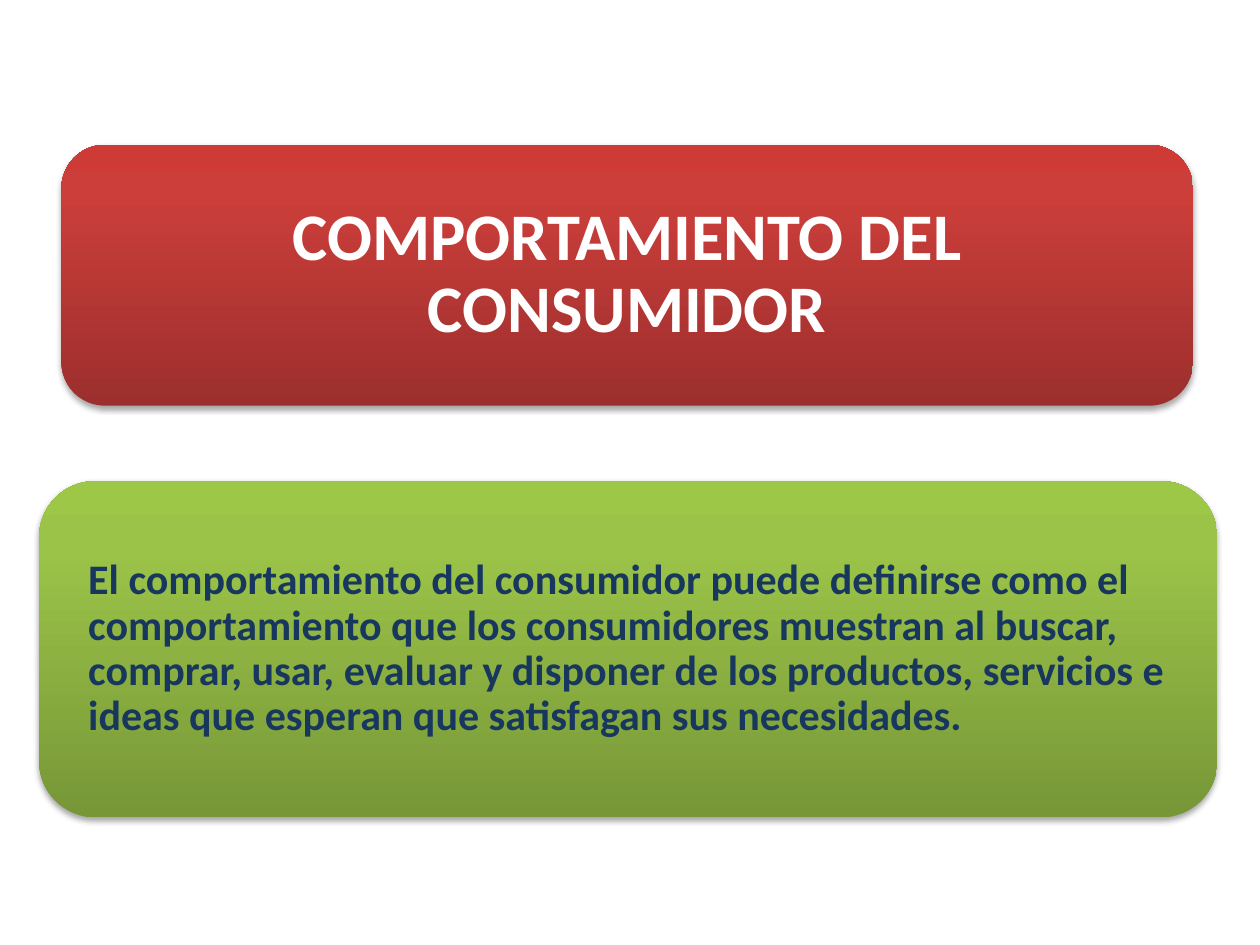
from dataclasses import dataclass

import pptx
import pptx.dml.color
import pptx.enum.shapes
import pptx.enum.text
import pptx.oxml
import pptx.oxml.ns
import pptx.slide
import pptx.util
from lxml import etree

Cm = pptx.util.Cm
RGBColor = pptx.dml.color.RGBColor
Align = pptx.enum.text.PP_ALIGN
qn = pptx.oxml.ns.qn

WHITE = RGBColor(0xFF, 0xFF, 0xFF)
NAVY = RGBColor(0x17, 0x37, 0x5E)
BLACK = RGBColor(0x00, 0x00, 0x00)
# Shades run from the bottom edge to the top edge
REDS = (RGBColor(0x9C, 0x2F, 0x2D), RGBColor(0xCB, 0x3E, 0x3A), RGBColor(0xCE, 0x3B, 0x37))
GREENS = (RGBColor(0x77, 0x97, 0x37), RGBColor(0x9B, 0xC3, 0x48), RGBColor(0x9D, 0xC7, 0x46))
STOP_PERCENTS = (0, 80, 100)


@dataclass(frozen=True)
class Panel:
    left: float
    top: float
    width: float
    height: float
    shades: tuple[RGBColor, ...]
    text: str
    size: int
    color: RGBColor
    align: Align


PANELS = (
    Panel(1.24, 2.92, 22.81, 5.26, REDS,
          "COMPORTAMIENTO DEL CONSUMIDOR", 38, WHITE, Align.CENTER),
    Panel(0.79, 9.7, 23.75, 6.78, GREENS,
          "El comportamiento del consumidor puede definirse como el "
          "comportamiento que los consumidores muestran al buscar, comprar, "
          "usar, evaluar y disponer de los productos, servicios e ideas que "
          "esperan que satisfagan sus necesidades.", 24, NAVY, Align.LEFT),
)


def add_color(parent: etree._Element, color: RGBColor) -> etree._Element:
    return etree.SubElement(parent, qn("a:srgbClr"), val=str(color))


def fill_gradient(box, shades: tuple[RGBColor, ...]) -> None:
    box.fill.gradient()
    box.fill.gradient_angle = 90
    stops = box.fill._xPr.find(".//" + qn("a:gsLst"))
    for old in list(stops):
        stops.remove(old)
    for percent, shade in zip(STOP_PERCENTS, shades):
        add_color(etree.SubElement(stops, qn("a:gs"), pos=str(percent * 1000)), shade)


def add_shadow(box) -> None:
    box.shadow.inherit = False
    effects = box._element.spPr.find(qn("a:effectLst"))
    shadow = etree.SubElement(effects, qn("a:outerShdw"), blurRad="40000",
                              dist="23000", dir="5400000", rotWithShape="0")
    etree.SubElement(add_color(shadow, BLACK), qn("a:alpha"), val="35000")


def add_panel(page: pptx.slide.Slide, panel: Panel) -> None:
    box = page.shapes.add_shape(
        pptx.enum.shapes.MSO_SHAPE.ROUNDED_RECTANGLE,
        Cm(panel.left), Cm(panel.top), Cm(panel.width), Cm(panel.height))
    fill_gradient(box, panel.shades)
    box.line.fill.background()
    add_shadow(box)

    # Text
    frame = box.text_frame
    frame.word_wrap = True
    frame.vertical_anchor = pptx.enum.text.MSO_ANCHOR.MIDDLE
    frame.margin_left = frame.margin_right = Cm(0.66)
    frame.margin_top = frame.margin_bottom = 0
    para = frame.paragraphs[0]
    para.alignment = panel.align
    para.line_spacing = 0.9
    span = para.add_run()
    span.text = panel.text
    span.font.name = "Calibri"
    span.font.size = pptx.util.Pt(panel.size)
    span.font.bold = True
    span.font.color.rgb = panel.color


def main() -> None:
    deck = pptx.Presentation()
    deck.slide_width, deck.slide_height = Cm(25.4), Cm(19.05)
    page = deck.slides.add_slide(deck.slide_layouts[6])
    # Title panel above, definition panel below
    for panel in PANELS:
        add_panel(page, panel)
    deck.save("out.pptx")


if __name__ == "__main__":
    main()
